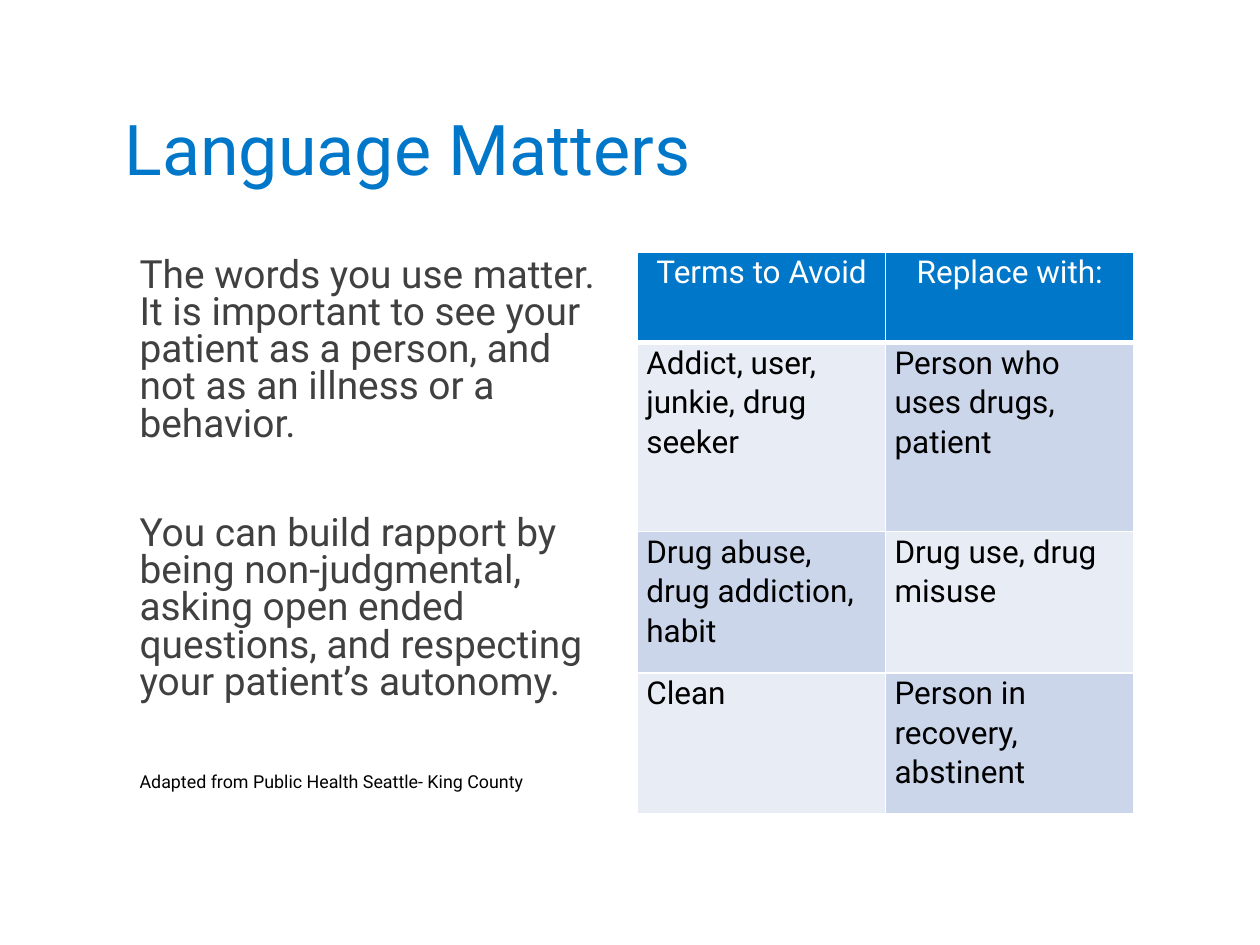
import dataclasses

import lxml.etree
import pptx
import pptx.dml.color
import pptx.enum.text
import pptx.oxml.ns
import pptx.util

Inches = pptx.util.Inches
Pt = pptx.util.Pt
Align = pptx.enum.text.PP_ALIGN
Anchor = pptx.enum.text.MSO_ANCHOR


@dataclasses.dataclass(frozen=True)
class Theme:
    font: str = "Roboto"
    blue: str = "0077C8"
    gray: str = "404040"
    black: str = "000000"
    white: str = "FFFFFF"
    bands: tuple[str, str] = ("E7ECF5", "CCD6EB")
    title_size: float = 40
    body_size: float = 22.2
    table_size: float = 18
    credit_size: float = 10.2


@dataclasses.dataclass(frozen=True)
class Statement:
    text: str
    size: float
    color: str
    space_before: float = 0


@dataclasses.dataclass(frozen=True)
class TermPair:
    avoid: str
    replacement: str
    height: float


THEME = Theme()

STATEMENTS = [
    Statement("The words you use matter. It is important to see your patient as a person, "
              "and not as an illness or a behavior.", THEME.body_size, THEME.gray),
    Statement("You can build rapport by being non-judgmental, asking open ended questions, "
              "and respecting your patient’s autonomy.", THEME.body_size, THEME.gray, 41),
    Statement("Adapted from Public Health Seattle- King County",
              THEME.credit_size, THEME.black, 41),
]

TERMS = [
    TermPair("Terms to Avoid", "Replace with:", 0.72),
    TermPair("Addict, user, junkie, drug seeker", "Person who uses drugs, patient", 1.5),
    TermPair("Drug abuse, drug addiction, habit", "Drug use, drug misuse", 1.12),
    TermPair("Clean", "Person in recovery, abstinent", 1.12),
]


def style_paragraph(para, size: float, color: str, line_spacing: float, align=Align.LEFT) -> None:
    para.alignment = align
    para.line_spacing = line_spacing
    para.font.name = THEME.font
    para.font.size = Pt(size)
    para.font.color.rgb = pptx.dml.color.RGBColor.from_string(color)


def set_borders(cell, bottom_width: float) -> None:
    """Draw white cell borders, placed ahead of the fill as the schema asks."""
    properties = cell._tc.get_or_add_tcPr()
    widths = {"a:lnL": 1, "a:lnR": 1, "a:lnT": 1, "a:lnB": bottom_width}
    for position, (tag, width) in enumerate(widths.items()):
        line = lxml.etree.Element(pptx.oxml.ns.qn(tag), w=str(Pt(width)))
        fill = lxml.etree.SubElement(line, pptx.oxml.ns.qn("a:solidFill"))
        lxml.etree.SubElement(fill, pptx.oxml.ns.qn("a:srgbClr"), val=THEME.white)
        properties.insert(position, line)


def add_title(page, text: str) -> None:
    title = page.shapes.title
    title.left, title.top = Inches(0.89), Inches(0.63)
    title.width, title.height = Inches(8.17), Inches(1.16)
    frame = title.text_frame
    frame.text = text
    frame.auto_size = pptx.enum.text.MSO_AUTO_SIZE.NONE
    frame.vertical_anchor = Anchor.MIDDLE
    style_paragraph(frame.paragraphs[0], THEME.title_size, THEME.blue, 0.9)


def add_statements(page, statements: list[Statement]) -> None:
    box = page.shapes.add_textbox(Inches(1.01), Inches(2), Inches(3.93), Inches(4.76))
    frame = box.text_frame
    frame.word_wrap = True
    for index, statement in enumerate(statements):
        para = frame.add_paragraph() if index else frame.paragraphs[0]
        para.text = statement.text
        para.space_before = Pt(statement.space_before)
        style_paragraph(para, statement.size, statement.color, 0.8)


def fill_cell(cell, text: str, row: int, column: int) -> None:
    header = row == 0
    color = THEME.blue if header else THEME.bands[(row + column + 1) % 2]
    cell.fill.solid()
    cell.fill.fore_color.rgb = pptx.dml.color.RGBColor.from_string(color)
    cell.margin_left = cell.margin_right = Inches(0.07)
    cell.margin_top = cell.margin_bottom = 0
    cell.text = text
    style_paragraph(cell.text_frame.paragraphs[0], THEME.table_size,
                    THEME.white if header else THEME.black, 1.07,
                    Align.CENTER if header else Align.LEFT)
    set_borders(cell, 3 if header or row == 0 else 1)


def add_terms_table(page, terms: list[TermPair]) -> None:
    height = sum(pair.height for pair in terms)
    table = page.shapes.add_table(len(terms), 2, Inches(5.06), Inches(2),
                                  Inches(3.94), Inches(height)).table
    for row, pair in enumerate(terms):
        table.rows[row].height = Inches(pair.height)
        for column, text in enumerate((pair.avoid, pair.replacement)):
            fill_cell(table.cell(row, column), text, row, column)


def main() -> None:
    deck = pptx.Presentation()
    deck.slide_width, deck.slide_height = Inches(10), Inches(7.5)
    page = deck.slides.add_slide(deck.slide_layouts.get_by_name("Title Only"))

    # Heading
    add_title(page, "Language Matters")
    # Guidance on the left
    add_statements(page, STATEMENTS)
    # Word choices on the right
    add_terms_table(page, TERMS)

    deck.save("out.pptx")


if __name__ == "__main__":
    main()
